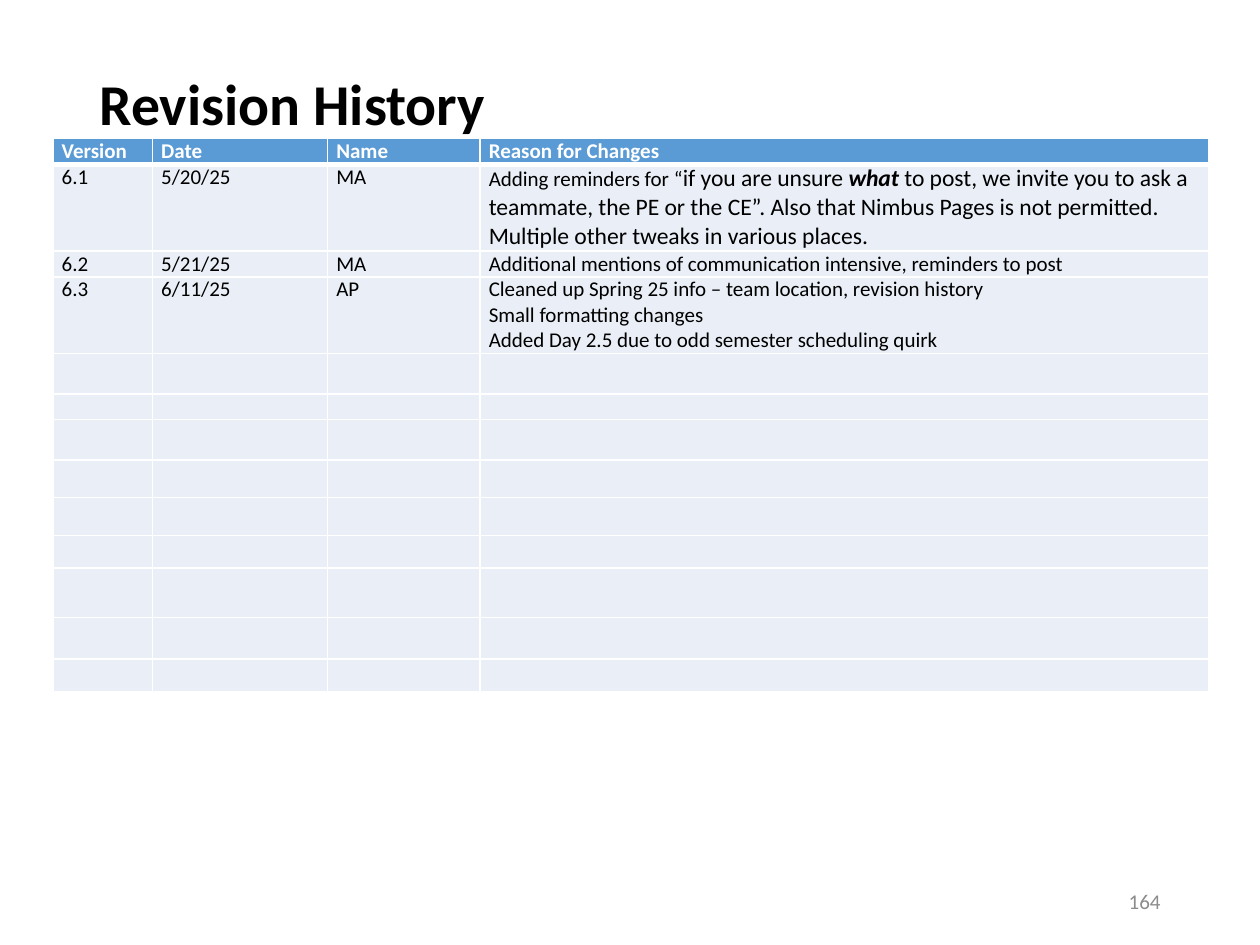
import pptx
import pptx.util
import pptx.dml.color
import pptx.enum.text
import pptx.oxml
import pptx.oxml.ns
import lxml.etree

Inches, Pt = pptx.util.Inches, pptx.util.Pt
RGBColor = pptx.dml.color.RGBColor
PP_ALIGN, MSO_ANCHOR = pptx.enum.text.PP_ALIGN, pptx.enum.text.MSO_ANCHOR

BLACK = RGBColor(0x00, 0x00, 0x00)
WHITE = RGBColor(0xFF, 0xFF, 0xFF)
GRAY = RGBColor(0x8C, 0x8C, 0x8C)
HEADER_BLUE = RGBColor(0x5B, 0x9B, 0xD5)
PALE_BLUE = RGBColor(0xEA, 0xEF, 0xF7)

HEADINGS = ["Version", "Date", "Name", "Reason for Changes"]
REVISIONS = [
    ["6.1", "5/20/25", "MA", ""],
    ["6.2", "5/21/25", "MA",
     "Additional mentions of communication intensive, reminders to post"],
    ["6.3", "6/11/25", "AP",
     "Cleaned up Spring 25 info – team location, revision history\n"
     "Small formatting changes\n"
     "Added Day 2.5 due to odd semester scheduling quirk"],
]
# Reason for version 6.1: text, size, emphasis
REMINDER_SPANS = [
    ("Adding reminders for “", 12, False),
    ("if you are unsure ", 13.5, False),
    ("what", 13.5, True),
    (" to post, we invite you to ask a teammate, the PE or the CE”. Also that "
     "Nimbus Pages is not permitted. Multiple other tweaks in various places.",
     13.5, False),
]
COLUMN_WIDTHS = [0.79, 1.39, 1.21, 5.78]
ROW_HEIGHTS = [0.2, 0.69, 0.2, 0.61, 0.32, 0.2, 0.32, 0.3, 0.3, 0.26, 0.39, 0.33, 0.26]


def format_span(span, size, color, bold=False):
    span.font.name = "Calibri"
    span.font.size = Pt(size)
    span.font.color.rgb = color
    span.font.bold = bold


deck = pptx.Presentation()
deck.slide_width, deck.slide_height = Inches(10), Inches(7.5)
page = deck.slides.add_slide(deck.slide_layouts[5])

# Title, lifted above the table by its bottom inset
title = page.shapes.title
title.left, title.top = Inches(0.69), Inches(0.4)
title.width, title.height = Inches(8.62), Inches(1.45)
title.text_frame.text = "Revision History"
title.text_frame.vertical_anchor = MSO_ANCHOR.MIDDLE
title.text_frame.margin_bottom = Inches(0.6)
para = title.text_frame.paragraphs[0]
para.alignment = PP_ALIGN.LEFT
para.line_spacing = 0.9
format_span(para.runs[0], 33, BLACK, bold=True)

# Revision table
table = page.shapes.add_table(
    len(ROW_HEIGHTS), len(COLUMN_WIDTHS), Inches(0.42), Inches(1.1),
    Inches(sum(COLUMN_WIDTHS)), Inches(sum(ROW_HEIGHTS))).table
table.horz_banding = False
for column, width in zip(table.columns, COLUMN_WIDTHS):
    column.width = Inches(width)
for row, height in zip(table.rows, ROW_HEIGHTS):
    row.height = Inches(height)

# Cell text
for row, texts in zip(table.rows, [HEADINGS] + REVISIONS):
    for cell, text in zip(row.cells, texts):
        cell.text_frame.text = text
reminder = table.cell(1, 3).text_frame.paragraphs[0]
for text, size, emphasis in REMINDER_SPANS:
    span = reminder.add_run()
    span.text = text
    format_span(span, size, BLACK, bold=emphasis)
    span.font.italic = emphasis

# Cell formatting
for row_index, row in enumerate(table.rows):
    is_header = row_index == 0
    for cell in row.cells:
        cell.margin_left = cell.margin_right = Inches(0.07)
        cell.margin_top = cell.margin_bottom = 0
        cell.fill.solid()
        cell.fill.fore_color.rgb = HEADER_BLUE if is_header else PALE_BLUE
        if is_header:
            # Thick white rule under the header
            rule = pptx.oxml.parse_xml(
                f'<a:lnB {pptx.oxml.ns.nsdecls("a")} w="{Pt(3)}"><a:solidFill>'
                f'<a:srgbClr val="{WHITE}"/></a:solidFill></a:lnB>')
            cell._tc.get_or_add_tcPr().insert(0, rule)
        for para in cell.text_frame.paragraphs:
            for span in para.runs:
                if span.font.size is None:
                    format_span(span, 12, WHITE if is_header else BLACK, bold=is_header)
            if not para.runs:
                # Text size of an empty cell, so that short rows stay short
                lxml.etree.SubElement(
                    para._p, pptx.oxml.ns.qn("a:endParaRPr"), sz="1200")

# Page number
number = page.shapes.add_textbox(Inches(7.06), Inches(6.95), Inches(2.25), Inches(0.4))
number.text_frame.word_wrap = True
number.text_frame.vertical_anchor = MSO_ANCHOR.MIDDLE
number.text_frame.text = "164"
para = number.text_frame.paragraphs[0]
para.alignment = PP_ALIGN.RIGHT
format_span(para.runs[0], 12, GRAY)

deck.save("out.pptx")
